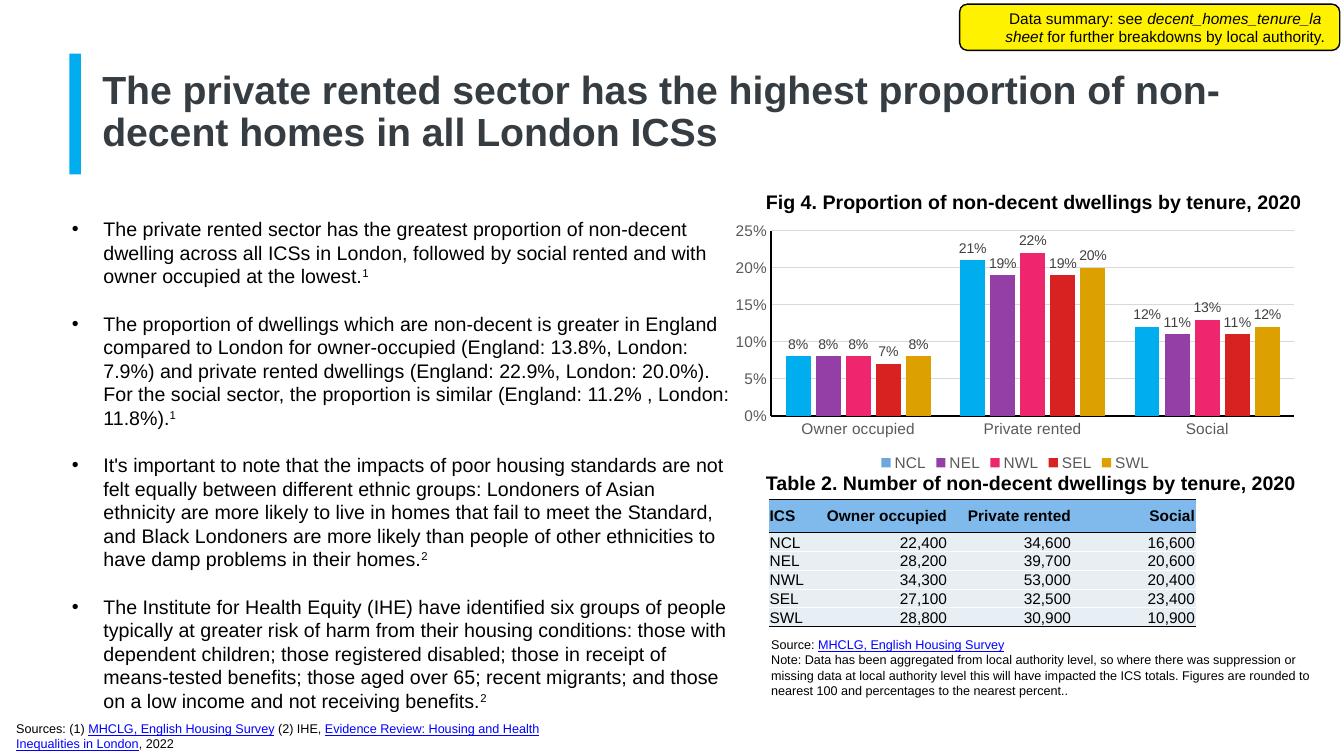
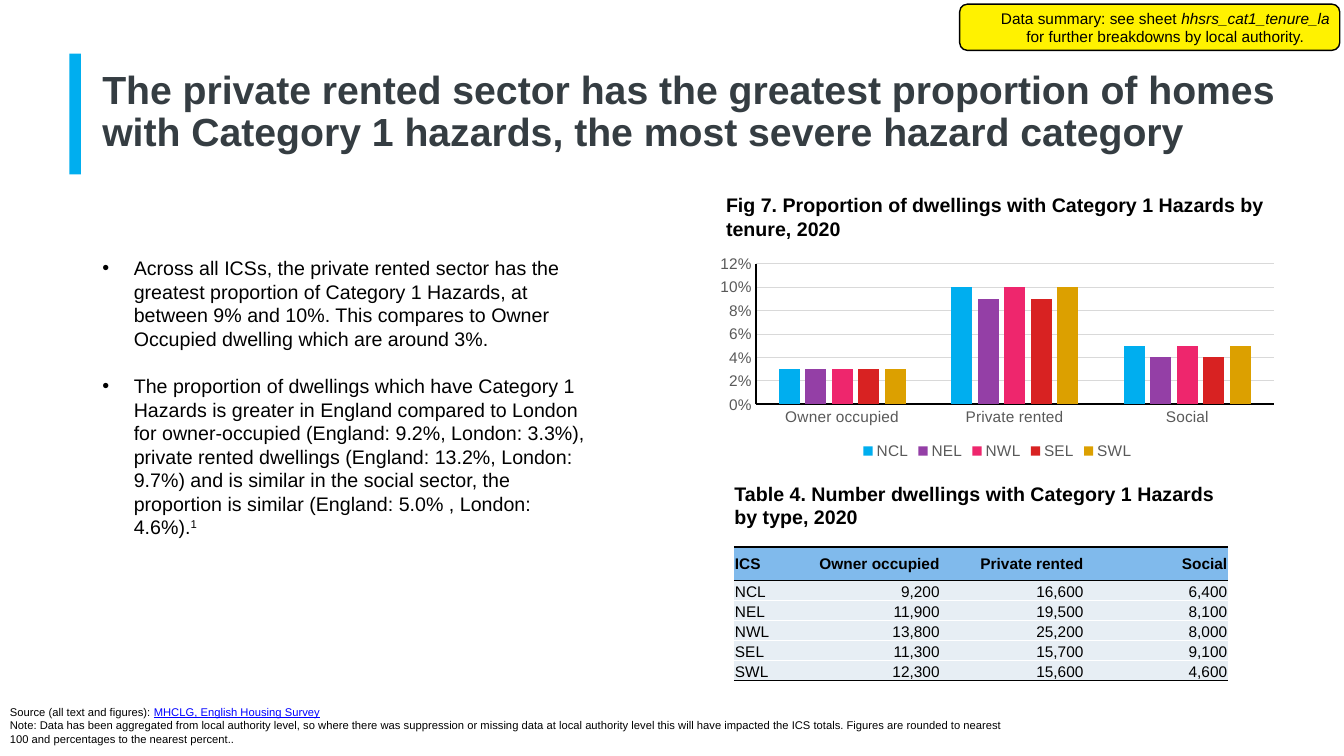
"""Build two slides on housing quality by tenure in the London ICSs."""
from lxml.etree import SubElement
from pptx import Presentation
from pptx.chart.data import CategoryChartData
from pptx.dml.color import RGBColor
from pptx.enum.chart import XL_CHART_TYPE, XL_LABEL_POSITION, XL_LEGEND_POSITION, XL_TICK_MARK
from pptx.enum.shapes import MSO_SHAPE
from pptx.enum.text import MSO_ANCHOR, PP_ALIGN
from pptx.oxml import parse_xml
from pptx.oxml.ns import nsdecls, qn
from pptx.util import Pt

PX = 9525
BLACK, WHITE, GREY, LINK_BLUE = "000000", "FFFFFF", "595959", "0000FF"
ACCENT, TITLE_INK, CALLOUT = "00AEEF", "353D42", "FFF200"
HEADER_FILL, BODY_FILL, GRID = "80BAEC", "E7EEF4", "D9D9D9"
SERIES_COLOURS = {"NCL": ACCENT, "NEL": "943FA6", "NWL": "EE266D", "SEL": "D82222", "SWL": "DCA000"}
TENURES = ["Owner occupied", "Private rented", "Social"]
NO_TABLE_STYLE = "{2D5ABB26-0587-4C30-8999-92F81FD0307C}"
RUN_STYLES = {
    "plain": {},
    "link": {"underline": True},
    "italic": {"italic": True},
    "superscript": {},
}
SURVEY = ("MHCLG, English Housing Survey", "link")
NOTE = [
    "Note: Data has been aggregated from local authority level, so where there was suppression or "
    "missing data at local authority level this will have impacted the ICS totals. Figures are "
    "rounded to nearest 100 and percentages to the nearest percent.."
]


def colour(hex_code):
    return RGBColor.from_string(hex_code)


def write(frame, paragraphs, size, ink=BLACK, bold=False, align=PP_ALIGN.LEFT, bullets=False):
    frame.word_wrap = True
    for index, runs in enumerate(paragraphs):
        paragraph = frame.add_paragraph() if index else frame.paragraphs[0]
        paragraph.alignment = align
        if bullets:
            paragraph.space_before = Pt(17 if index else 0)
            properties = paragraph._p.get_or_add_pPr()
            properties.set("marL", str(30 * PX))
            properties.set("indent", str(-30 * PX))
            SubElement(properties, qn("a:buFont")).set("typeface", "Arial")
            SubElement(properties, qn("a:buChar")).set("char", "•")
        for item in runs:
            text, style = (item, "plain") if isinstance(item, str) else item
            run = paragraph.add_run()
            run.text = text
            formats = {"name": "Arial", "size": Pt(size), "bold": bold, **RUN_STYLES[style]}
            for name, value in formats.items():
                setattr(run.font, name, value)
            run.font.color.rgb = colour(LINK_BLUE if style == "link" else ink)
            if style == "superscript":
                run._r.get_or_add_rPr().set("baseline", "30000")


slides = [
    {
        "title": "The private rented sector has the highest proportion of non-decent homes in all London ICSs",
        "title_width": 1104,
        "callout": ["Data summary: see ", ("decent_homes_tenure_la sheet ", "italic"),
                    "for further breakdowns by local authority."],
        "headings": [
            ((720, 176, 552, 33), "Fig 4. Proportion of non-decent dwellings by tenure, 2020"),
            ((720, 444, 552, 33), "Table 2. Number of non-decent dwellings by tenure, 2020"),
        ],
        "body_box": (59, 202, 647, 500),
        "body": [
            ["The private rented sector has the greatest proportion of non-decent dwelling across all "
             "ICSs in London, followed by social rented and with owner occupied at the lowest.",
             ("1", "superscript")],
            ["The proportion of dwellings which are non-decent is greater in England compared to London "
             "for owner-occupied (England: 13.8%, London: 7.9%) and private rented dwellings (England: "
             "22.9%, London: 20.0%). For the social sector, the proportion is similar (England: 11.2% , "
             "London: 11.8%).", ("1", "superscript")],
            ["It's important to note that the impacts of poor housing standards are not felt equally "
             "between different ethnic groups: Londoners of Asian ethnicity are more likely to live in "
             "homes that fail to meet the Standard, and Black Londoners are more likely than people of "
             "other ethnicities to have damp problems in their homes.", ("2", "superscript")],
            ["The Institute for Health Equity (IHE) have identified six groups of people typically at "
             "greater risk of harm from their housing conditions: those with dependent children; those "
             "registered disabled; those in receipt of means-tested benefits; those aged over 65; recent "
             "migrants; and those on a low income and not receiving benefits.", ("2", "superscript")],
        ],
        "footers": [
            ((725, 602, 551, 68), 9, [["Source: ", SURVEY], NOTE]),
            ((6, 682, 568, 38), 9, [[
                "Sources: (1) ", SURVEY, " (2) IHE, ",
                ("Evidence Review: Housing and Health Inequalities in London", "link"), ", 2022"]]),
        ],
        "chart_box": (690, 205, 554, 248),
        "plot": {"x": 0.08, "y": 0.06, "w": 0.9, "h": 0.71},
        "gap": 118, "overlap": -21, "maximum": 0.25, "unit": 0.05,
        "labels": True, "legend_colours": {"NCL": "6DA7DE"},
        "shares": {"NCL": (0.08, 0.21, 0.12), "NEL": (0.08, 0.19, 0.11), "NWL": (0.08, 0.22, 0.13),
                   "SEL": (0.07, 0.19, 0.11), "SWL": (0.08, 0.2, 0.12)},
        "table_at": (732, 476), "columns": (53, 118), "rows": (31, 18),
        "counts": {"NCL": (22400, 34600, 16600), "NEL": (28200, 39700, 20600),
                   "NWL": (34300, 53000, 20400), "SEL": (27100, 32500, 23400),
                   "SWL": (28800, 30900, 10900)},
    },
    {
        "title": "The private rented sector has the greatest proportion of homes with Category 1 hazards, "
                 "the most severe hazard category",
        "title_width": 1151,
        "callout": ["Data summary: see sheet ", ("hhsrs_cat1_tenure_la ", "italic"),
                    "for further breakdowns by local authority."],
        "headings": [
            ((682, 179, 582, 55), "Fig 7. Proportion of dwellings with Category 1 Hazards by tenure, 2020"),
            ((690, 454, 491, 55), "Table 4. Number dwellings with Category 1 Hazards by type, 2020"),
        ],
        "body_box": (88, 239, 491, 303),
        "body": [
            ["Across all ICSs, the private rented sector has the greatest proportion of Category 1 "
             "Hazards, at between 9% and 10%. This compares to Owner Occupied dwelling which are "
             "around 3%."],
            ["The proportion of dwellings which have Category 1 Hazards is greater in England compared "
             "to London for owner-occupied (England: 9.2%, London: 3.3%), private rented dwellings "
             "(England: 13.2%, London: 9.7%) and is similar in the social sector, the proportion is "
             "similar (England: 5.0% , London: 4.6%).", ("1", "superscript")],
        ],
        "footers": [
            ((0, 667, 977, 48), 8, [["Source (all text and figures): ", SURVEY], NOTE]),
        ],
        "chart_box": (676, 239, 548, 203),
        "plot": {"x": 0.08, "y": 0.06, "w": 0.9, "h": 0.66},
        "gap": 219, "overlap": -27, "maximum": 0.12, "unit": 0.02,
        "labels": False, "legend_colours": {},
        "shares": {"NCL": (0.03, 0.1, 0.05), "NEL": (0.03, 0.09, 0.04), "NWL": (0.03, 0.1, 0.05),
                   "SEL": (0.03, 0.09, 0.04), "SWL": (0.03, 0.1, 0.05)},
        "table_at": (699, 521), "columns": (60, 137), "rows": (32, 19),
        "counts": {"NCL": (9200, 16600, 6400), "NEL": (11900, 19500, 8100),
                   "NWL": (13800, 25200, 8000), "SEL": (11300, 15700, 9100),
                   "SWL": (12300, 15600, 4600)},
    },
]

presentation = Presentation()
presentation.slide_width, presentation.slide_height = 1280 * PX, 720 * PX

for content in slides:
    slide = presentation.slides.add_slide(presentation.slide_layouts[6])

    bar = slide.shapes.add_shape(MSO_SHAPE.RECTANGLE, 66 * PX, 51 * PX, 11 * PX, 115 * PX)
    bar.shadow.inherit = False
    bar.fill.solid()
    bar.fill.fore_color.rgb = colour(ACCENT)
    bar.line.fill.background()

    chart_data = CategoryChartData(number_format="0%")
    chart_data.categories = TENURES
    for name, values in content["shares"].items():
        chart_data.add_series(name, values)
    chart = slide.shapes.add_chart(
        XL_CHART_TYPE.COLUMN_CLUSTERED, *[length * PX for length in content["chart_box"]], chart_data).chart
    chart.has_title = False
    chart.font.name, chart.font.size = "Arial", Pt(11)
    chart.font.color.rgb = colour(GREY)
    chart.has_legend = True
    chart.legend.position = XL_LEGEND_POSITION.BOTTOM
    chart.legend.include_in_layout = False
    for axis, line_width in ((chart.category_axis, 1.25), (chart.value_axis, 1)):
        axis.major_tick_mark = axis.minor_tick_mark = XL_TICK_MARK.NONE
        axis.format.line.color.rgb = colour(BLACK)
        axis.format.line.width = Pt(line_width)
    value_axis = chart.value_axis
    value_axis.minimum_scale, value_axis.maximum_scale = 0, content["maximum"]
    value_axis.major_unit = content["unit"]
    value_axis.tick_labels.number_format = "0%"
    value_axis.tick_labels.number_format_is_linked = False
    value_axis.major_gridlines.format.line.color.rgb = colour(GRID)
    value_axis.major_gridlines.format.line.width = Pt(0.75)

    plot = chart.plots[0]
    plot.vary_by_categories = False
    plot.gap_width, plot.overlap = content["gap"], content["overlap"]
    for series in plot.series:
        bar_colour = SERIES_COLOURS[series.name]
        legend_colour = content["legend_colours"].get(series.name, bar_colour)
        series.format.fill.solid()
        series.format.fill.fore_color.rgb = colour(legend_colour)
        if legend_colour != bar_colour:
            for index in range(len(TENURES)):
                point_fill = series.points[index].format.fill
                point_fill.solid()
                point_fill.fore_color.rgb = colour(bar_colour)
    if content["labels"]:
        plot.has_data_labels = True
        labels = plot.data_labels
        labels.show_value = True
        labels.number_format, labels.number_format_is_linked = "0%", False
        labels.position = XL_LABEL_POSITION.OUTSIDE_END
        labels.font.name, labels.font.size = "Arial", Pt(10)
        labels.font.color.rgb = colour("404040")

    plot_area = chart._chartSpace.chart.plotArea
    for layout in plot_area.findall(qn("c:layout")):
        plot_area.remove(layout)
    edges = "".join(f'<c:{name} val="{value}"/>' for name, value in content["plot"].items())
    plot_area.insert(0, parse_xml(
        f'<c:layout {nsdecls("c")}><c:manualLayout><c:layoutTarget val="inner"/>'
        f'<c:xMode val="edge"/><c:yMode val="edge"/>{edges}</c:manualLayout></c:layout>'))

    first_width, count_width = content["columns"]
    header_height, row_height = content["rows"]
    widths = [first_width] + [count_width] * 3
    heights = [header_height] + [row_height] * 5
    left, top = content["table_at"]
    table = slide.shapes.add_table(
        6, 4, left * PX, top * PX, sum(widths) * PX, sum(heights) * PX).table
    table._tbl.tblPr.find(qn("a:tableStyleId")).text = NO_TABLE_STYLE
    for column, width in zip(table.columns, widths):
        column.width = width * PX
    table_rows = [["ICS", *TENURES]]
    table_rows += [[name, *(f"{count:,}" for count in counts)] for name, counts in content["counts"].items()]
    for row_index, (values, height) in enumerate(zip(table_rows, heights)):
        table.rows[row_index].height = height * PX
        is_header = row_index == 0
        borders = {"lnT": (BLACK, 1) if row_index < 2 else (WHITE, 0.75),
                   "lnB": (BLACK, 1) if row_index in (0, 5) else (WHITE, 0.75)}
        for column_index, value in enumerate(values):
            cell = table.cell(row_index, column_index)
            cell.margin_left = cell.margin_right = cell.margin_top = PX
            cell.margin_bottom = 0
            cell.vertical_anchor = MSO_ANCHOR.MIDDLE if is_header else MSO_ANCHOR.BOTTOM
            cell.fill.solid()
            cell.fill.fore_color.rgb = colour(HEADER_FILL if is_header else BODY_FILL)
            write(cell.text_frame, [[value]], 11, bold=is_header,
                  align=PP_ALIGN.RIGHT if column_index else PP_ALIGN.LEFT)
            for position, (tag, (ink, width)) in enumerate(borders.items()):
                cell._tc.get_or_add_tcPr().insert(position, parse_xml(
                    f'<a:{tag} {nsdecls("a")} w="{Pt(width)}"><a:solidFill>'
                    f'<a:srgbClr val="{ink}"/></a:solidFill></a:{tag}>'))

    title_box = (88, 38, content["title_width"], 139)
    texts = [(title_box, [[content["title"]]], {"size": 28, "ink": TITLE_INK, "bold": True})]
    texts += [(box, [[heading]], {"size": 14, "bold": True}) for box, heading in content["headings"]]
    texts += [(content["body_box"], content["body"], {"size": 14, "bullets": True})]
    texts += [(box, paragraphs, {"size": size}) for box, size, paragraphs in content["footers"]]
    for box, paragraphs, formats in texts:
        frame = slide.shapes.add_textbox(*[length * PX for length in box]).text_frame
        write(frame, paragraphs, **formats)
        if box == title_box:
            frame.vertical_anchor = MSO_ANCHOR.MIDDLE
            frame.paragraphs[0].line_spacing = 0.9

    callout = slide.shapes.add_shape(MSO_SHAPE.ROUNDED_RECTANGLE, 914 * PX, 4 * PX, 362 * PX, 44 * PX)
    callout.shadow.inherit = False
    callout.fill.solid()
    callout.fill.fore_color.rgb = colour(CALLOUT)
    callout.line.color.rgb = colour(BLACK)
    callout.line.width = Pt(1)
    frame = callout.text_frame
    frame.margin_left = 30 * PX
    frame.margin_right = frame.margin_top = frame.margin_bottom = 0
    frame.vertical_anchor = MSO_ANCHOR.MIDDLE
    write(frame, [content["callout"]], 11, align=PP_ALIGN.CENTER)

presentation.save("out.pptx")
